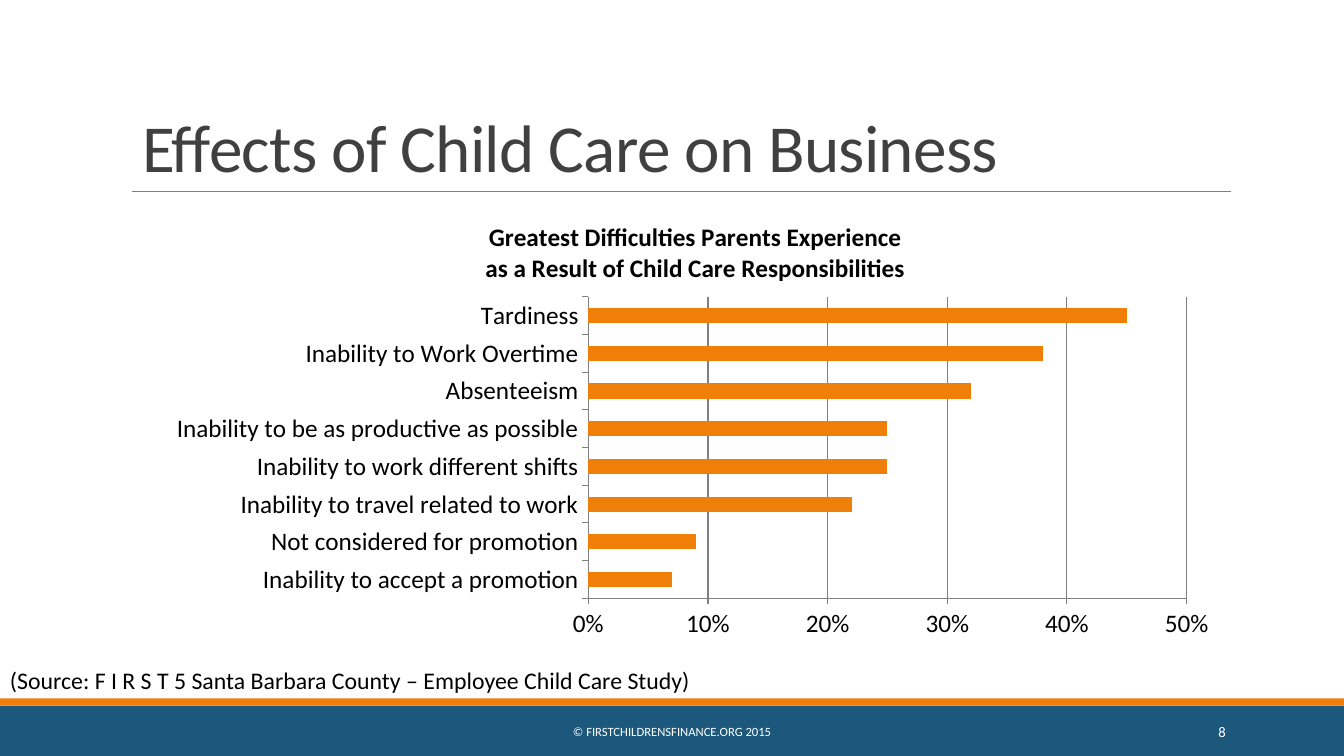
from dataclasses import dataclass

from lxml import etree
from pptx import Presentation
from pptx import util as u
from pptx.chart.data import CategoryChartData
from pptx.dml.color import RGBColor
from pptx.enum import chart as ch, shapes, text
from pptx.oxml import ns, parse_xml
from pptx.util import Cm


@dataclass(frozen=True)
class Theme:
    font: str = "Calibri"
    blue: str = "1B587C"
    orange: str = "F07F09"
    gray: str = "808080"
    heading: str = "404040"
    black: str = "000000"
    white: str = "FFFFFF"
    title_size: float = 48
    chart_size: float = 18
    source_size: float = 17
    number_size: float = 10.5
    footer_size: float = 9


THEME = Theme()
SLIDE_W, SLIDE_H = 33.87, 19.05

DIFFICULTIES = {
    "Inability to accept a promotion": 0.07,
    "Not considered for promotion": 0.09,
    "Inability to travel related to work": 0.22,
    "Inability to work different shifts": 0.25,
    "Inability to be as productive as possible": 0.25,
    "Absenteeism": 0.32,
    "Inability to Work Overtime": 0.38,
    "Tardiness": 0.45,
}


def color(value):
    return RGBColor.from_string(value)


def style_font(font, size, fill=THEME.black, bold=False):
    font.name = THEME.font
    font.size = u.Pt(size)
    font.bold = bold
    font.color.rgb = color(fill)


def add_text(slide, wording, box, size, fill=THEME.black, align=text.PP_ALIGN.LEFT,
             anchor=text.MSO_ANCHOR.TOP, line_spacing=None, tracking=None, grow=False):
    frame = slide.shapes.add_textbox(*map(Cm, box)).text_frame
    frame.word_wrap = True
    frame.vertical_anchor = anchor
    if grow:
        frame.auto_size = text.MSO_AUTO_SIZE.SHAPE_TO_FIT_TEXT
    paragraph = frame.paragraphs[0]
    paragraph.alignment = align
    paragraph.line_spacing = line_spacing
    run = paragraph.add_run()
    run.text = wording
    style_font(run.font, size, fill)
    if tracking is not None:
        run._r.get_or_add_rPr().set("spc", str(int(tracking * 100)))


def add_band(slide, top, height, fill):
    band = slide.shapes.add_shape(
        shapes.MSO_SHAPE.RECTANGLE, 0, Cm(top), Cm(SLIDE_W), Cm(height))
    band.shadow.inherit = False
    band.fill.solid()
    band.fill.fore_color.rgb = color(fill)
    band.line.fill.background()


def add_rule(slide, left, right, top):
    rule = slide.shapes.add_connector(
        shapes.MSO_CONNECTOR.STRAIGHT, Cm(left), Cm(top), Cm(right), Cm(top))
    rule.line.color.rgb = color(THEME.gray)
    rule.line.width = u.Pt(0.5)
    etree.SubElement(rule._element.spPr, ns.qn("a:effectLst"))


def style_line(line):
    line.color.rgb = color(THEME.gray)
    line.width = u.Pt(0.75)


def place_plot(chart, **fractions):
    """Fix the inner plot area as fractions of the chart frame."""
    modes = "".join(f'<c:{side}Mode val="edge"/>' for side in "xy")
    sizes = "".join(f'<c:{key} val="{value}"/>' for key, value in fractions.items())
    plot_area = chart._chartSpace.chart.plotArea
    for layout in plot_area.findall(ns.qn("c:layout")):
        plot_area.remove(layout)
    plot_area.insert(0, parse_xml(
        f'<c:layout {ns.nsdecls("c")}><c:manualLayout><c:layoutTarget val="inner"/>'
        f'{modes}{sizes}</c:manualLayout></c:layout>'))


def add_bar_chart(slide, title, values, box):
    data = CategoryChartData(number_format="0%")
    data.categories = list(values)
    data.add_series("Series 1", list(values.values()))
    chart = slide.shapes.add_chart(
        ch.XL_CHART_TYPE.BAR_CLUSTERED, *map(Cm, box), data).chart
    style_font(chart.font, THEME.chart_size)
    chart.has_legend = False

    # Chart title
    chart.has_title = True
    chart.chart_title.include_in_layout = False
    title_frame = chart.chart_title.text_frame
    title_frame.text = title
    for paragraph in title_frame.paragraphs:
        for run in paragraph.runs:
            style_font(run.font, THEME.chart_size, bold=True)

    # Bars
    plot = chart.plots[0]
    plot.gap_width = 150
    plot.vary_by_categories = False
    bars = plot.series[0].format.fill
    bars.solid()
    bars.fore_color.rgb = color(THEME.orange)

    # Axes
    for axis in (chart.category_axis, chart.value_axis):
        axis.major_tick_mark = ch.XL_TICK_MARK.OUTSIDE
        axis.minor_tick_mark = ch.XL_TICK_MARK.NONE
        style_line(axis.format.line)
    percent = chart.value_axis
    percent.minimum_scale, percent.maximum_scale, percent.major_unit = 0, 0.5, 0.1
    percent.has_major_gridlines = True
    style_line(percent.major_gridlines.format.line)
    percent.tick_labels.number_format = "0%"
    percent.tick_labels.number_format_is_linked = False
    place_plot(chart, x=0.4, y=0.21, w=0.56, h=0.68)


def main():
    deck = Presentation()
    deck.slide_width, deck.slide_height = Cm(SLIDE_W), Cm(SLIDE_H)
    slide = deck.slides.add_slide(deck.slide_layouts[6])

    # Footer bands and title rule
    add_band(slide, 17.78, 1.27, THEME.blue)
    add_band(slide, 17.6, 0.18, THEME.orange)
    add_rule(slide, 3.33, 31.01, 4.83)

    # Title and chart
    add_text(slide, "Effects of Child Care on Business", (3.33, 0.79, 27.66, 4.04),
             THEME.title_size, THEME.heading, anchor=text.MSO_ANCHOR.BOTTOM,
             line_spacing=0.85, tracking=-0.5)
    add_bar_chart(slide, "Greatest Difficulties Parents Experience\n"
                  "as a Result of Child Care Responsibilities",
                  DIFFICULTIES, (4.06, 5.13, 26.92, 11.18))

    # Footer and source
    add_text(slide, "© FIRSTCHILDRENSFINANCE.ORG 2015", (10.24, 17.93, 13.39, 1.02),
             THEME.footer_size, THEME.white, text.PP_ALIGN.CENTER, text.MSO_ANCHOR.MIDDLE)
    add_text(slide, "8", (27.51, 17.93, 3.63, 1.02),
             THEME.number_size, THEME.white, text.PP_ALIGN.RIGHT, text.MSO_ANCHOR.MIDDLE)
    add_text(slide, "(Source: F I R S T 5 Santa Barbara County – Employee Child Care Study)",
             (0, 16.64, 22.91, 0.99), THEME.source_size, grow=True)

    deck.save("out.pptx")


if __name__ == "__main__":
    main()
